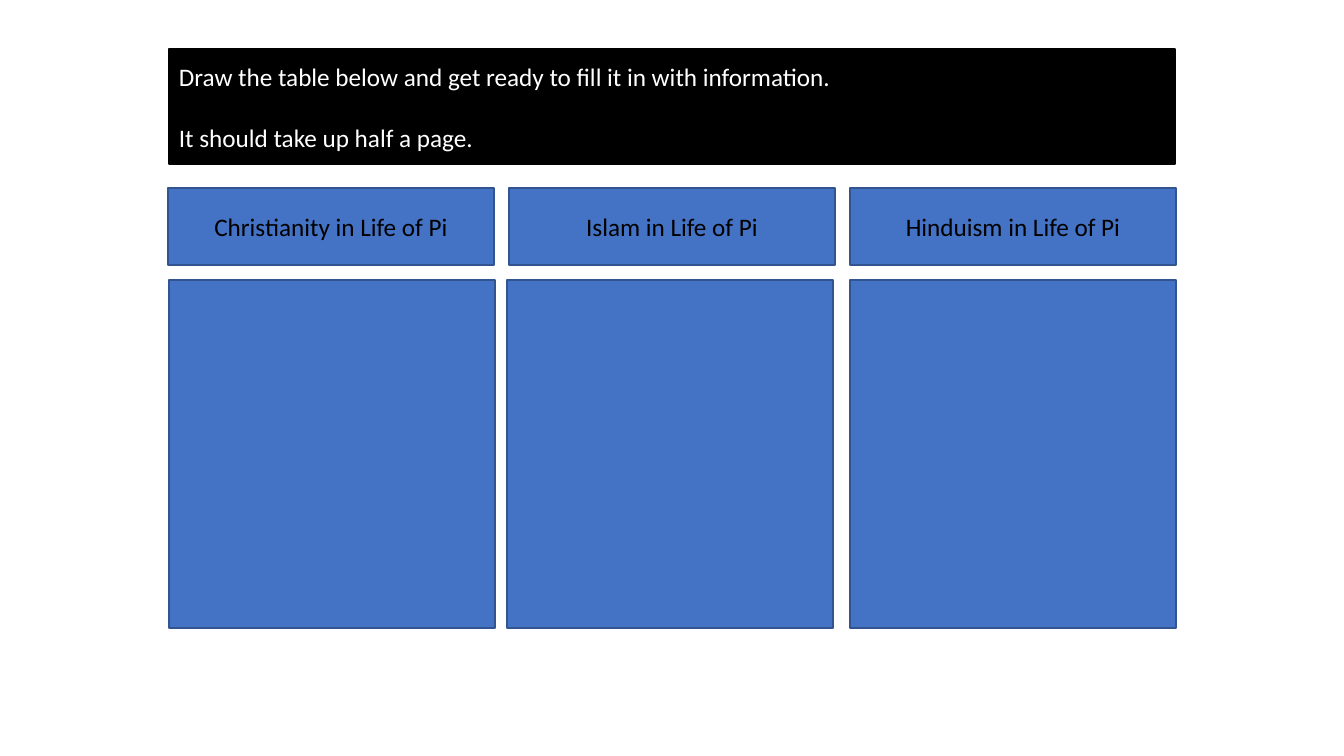
"""Build a slide with a three-column note table on religion in Life of Pi."""
from pptx import Presentation
from pptx.dml.color import RGBColor
from pptx.enum.shapes import MSO_SHAPE
from pptx.enum.text import MSO_ANCHOR, PP_ALIGN
from pptx.util import Pt

RECTANGLE = MSO_SHAPE.RECTANGLE
MIDDLE = MSO_ANCHOR.MIDDLE
LEFT, CENTER = PP_ALIGN.LEFT, PP_ALIGN.CENTER

BLACK = RGBColor(0x00, 0x00, 0x00)
WHITE = RGBColor(0xFF, 0xFF, 0xFF)
BLUE = RGBColor(0x44, 0x72, 0xC4)
DARK_BLUE = RGBColor(0x32, 0x54, 0x91)

INSTRUCTIONS = [
    "Draw the table below and get ready to fill it in with information.",
    "It should take up half a page.",
]
HEADINGS = [
    "Christianity in Life of Pi",
    "Islam in Life of Pi",
    "Hinduism in Life of Pi",
]

SCALE = 914400 / 100.8
SLIDE_WIDTH, SLIDE_HEIGHT = 1344, 756
BANNER = (169, 49, 1006, 115)
COLUMN_WIDTH = 326
HEADING_LEFT, HEADING_PITCH = 168, 341
HEADING_TOP, HEADING_HEIGHT = 188, 77
ANSWER_LEFTS = [169, 507, 850]
ANSWER_TOP, ANSWER_HEIGHT = 280, 348


def emu(pixels):
    """Turn px into EMU."""
    return round(pixels * SCALE)


def add_box(page, bounds, fill, outline):
    """Add a filled rectangle with a thin outline."""
    box = page.shapes.add_shape(RECTANGLE, *map(emu, bounds))
    box.shadow.inherit = False
    box.fill.solid()
    box.fill.fore_color.rgb = fill
    box.line.color.rgb = outline
    box.line.width = Pt(1)
    return box


def write(box, lines, color, alignment):
    """Write one paragraph per line, with a line's height between them."""
    frame = box.text_frame
    frame.word_wrap = True
    frame.vertical_anchor = MIDDLE
    for index, line in enumerate(lines):
        para = frame.add_paragraph() if index else frame.paragraphs[0]
        para.alignment = alignment
        para.space_before = Pt(22 if index else 0)
        span = para.add_run()
        span.text = line
        span.font.name = "Calibri"
        span.font.size = Pt(18)
        span.font.color.rgb = color


def main():
    """Build and save the deck."""
    deck = Presentation()
    deck.slide_width, deck.slide_height = emu(SLIDE_WIDTH), emu(SLIDE_HEIGHT)
    page = deck.slides.add_slide(deck.slide_layouts.get_by_name("Blank"))

    banner = add_box(page, BANNER, BLACK, BLACK)
    write(banner, INSTRUCTIONS, WHITE, LEFT)

    for column, (heading, answer_left) in enumerate(zip(HEADINGS, ANSWER_LEFTS)):
        left = HEADING_LEFT + column * HEADING_PITCH
        bounds = (left, HEADING_TOP, COLUMN_WIDTH, HEADING_HEIGHT)
        write(add_box(page, bounds, BLUE, DARK_BLUE), [heading], BLACK, CENTER)
        bounds = (answer_left, ANSWER_TOP, COLUMN_WIDTH, ANSWER_HEIGHT)
        add_box(page, bounds, BLUE, DARK_BLUE)

    deck.save("out.pptx")


if __name__ == "__main__":
    main()
